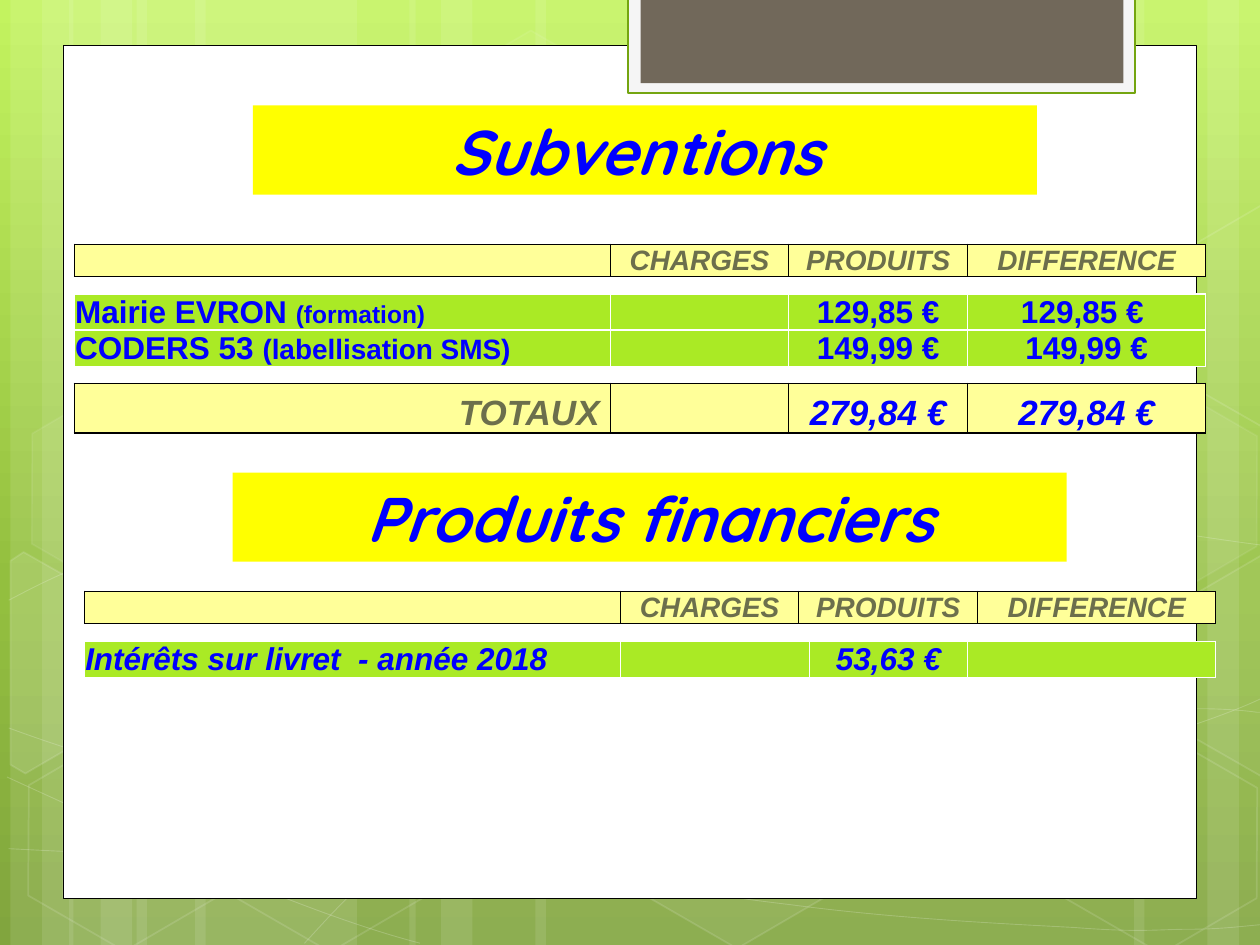
from copy import deepcopy

from lxml.etree import SubElement
from pptx import Presentation
from pptx.dml.color import RGBColor
from pptx.enum.shapes import MSO_SHAPE
from pptx.enum.text import MSO_ANCHOR, MSO_AUTO_SIZE, PP_ALIGN
from pptx.oxml.ns import qn
from pptx.util import Pt

COLORS = {
    "white": "FFFFFF", "black": "000000", "blue": "0000FF", "olive": "6C6F4C",
    "yellow": "FFFF00", "cream": "FFFF99", "lime": "AAEA25",
    "tab": "F5F5F5", "tab_line": "74A510", "tab_core": "71685A",
    "sky": "C3F35F", "meadow": "93BF3F", "ground": "81A53E",
}
BACKGROUND = [(0, "sky"), (0.62, "meadow"), (1, "ground")]
LEFT, CENTER, RIGHT = PP_ALIGN.LEFT, PP_ALIGN.CENTER, PP_ALIGN.RIGHT

STRIPE_CLUSTERS = [(78, 126, False), (111.5, 126, False), (528, 126, True), (306, 222, False)]
WAVES = [
    [(5, 485), (44, 487), (83, 489), (137, 488), (191, 487), (258, 486), (330, 479),
     (402, 472), (504, 458), (570, 444), (636, 431), (703, 409), (725, 397)],
    [(5, 343), (26, 332), (47, 321), (87, 310), (128, 300), (187, 284), (250, 279),
     (314, 274), (392, 273), (471, 279), (550, 284), (682, 307), (725, 312)],
    [(4, 444), (91, 484), (178, 523), (240, 539)],
    [(5, 416), (27, 424), (50, 432), (92, 443), (134, 454), (197, 472), (257, 485),
     (317, 497), (392, 510), (452, 517), (512, 525), (576, 528), (614, 530),
     (652, 533), (662, 531), (680, 531), (699, 531), (712, 529), (725, 528)],
    [(174, 539), (187, 525), (200, 510), (217, 497), (235, 485), (259, 470), (279, 460),
     (300, 450), (312, 446), (338, 438), (364, 431), (413, 421), (438, 416),
     (464, 411), (467, 411), (490, 410), (512, 407), (547, 405), (572, 405),
     (597, 404), (638, 405), (638, 405), (638, 405), (686, 405), (686, 405),
     (699, 405), (711, 406), (718, 407), (724, 407), (722, 407), (724, 407)],
]
HEXAGONS = [
    (240.5, 26, 4, 8), (358, 424, 6, 12), (8, 425.5, 0, 12), (10, 224.5, 7, 8),
    (125.5, 426, 0, 12), (542, 326, 10, 12), (600.5, 427, 0, 12), (600.5, 226, 7, 8),
]
CUT_HEXAGONS = [
    ([(6, 320.5), (13.5, 315.5), (69, 347), (68.5, 410.5), (14.5, 442), (6, 437)], 10),
    ([(666.5, 349), (720.5, 317.5), (726.5, 321), (726.5, 441.5), (721.5, 444), (666.5, 412.5)], 4),
    ([(666.5, 149), (720.5, 117.5), (727, 121), (726.5, 241), (721.5, 244), (666.5, 212.5)], 0),
]
PANELS = [
    ((36, 26, 648, 487.25), "white", "black", 0.5),
    ((359, -1.5, 289.5, 54.75), "tab", "tab_line", 1.25),
    ((366, -1.5, 276, 49), "tab_core", None, 0),
]
HEADINGS = [("Subventions ", (144.5, 60.25, 448, 51)), ("Produits financiers", (133, 270, 476.5, 51))]

COLUMNS = [306.25, 102, 102.25, 136]
HEADER = {
    "rows": [["", "CHARGES", "PRODUITS", "DIFFERENCE"]], "columns": COLUMNS, "height": 18.25,
    "fill": "cream", "border": ("black", 0.5), "anchor": MSO_ANCHOR.MIDDLE, "size": 16,
    "italic": True, "colors": ["olive"] * 4, "first": LEFT,
}
GRANTS = {
    "rows": [
        [[("Mairie EVRON ", 18), ("(formation)", 14)], "", "129,85 €", "129,85 € "],
        [[("CODERS 53 ", 18), ("(labellisation SMS)", 16)], "", "149,99 €", "149,99 €"],
    ],
    "columns": COLUMNS, "height": 20.5, "fill": "lime", "border": ("white", 1),
    "anchor": MSO_ANCHOR.BOTTOM, "size": 18, "italic": False, "colors": ["blue"] * 4, "first": LEFT,
}
INTEREST = GRANTS | {
    "rows": [["Intérêts sur livret  - année 2018", "", "53,63 €", ""]],
    "columns": [306.25, 108, 90.5, 141.75], "italic": True,
}
TOTALS = HEADER | {
    "rows": [["TOTAUX ", "", "279,84 €", "279,84 €"]], "height": 28.5, "border": ("black", 1),
    "anchor": MSO_ANCHOR.BOTTOM, "size": 20, "colors": ["olive"] + ["blue"] * 3, "first": RIGHT,
}
TABLES = [(42.5, 139.5, HEADER), (42.5, 168, GRANTS), (48.25, 337.75, HEADER),
          (48.25, 366.5, INTEREST), (42.5, 219, TOTALS)]


def rgb(name):
    return RGBColor.from_string(COLORS[name])


def write(frame, text, size=18, color="blue", font="Arial", italic=False, align=CENTER):
    paragraph = frame.paragraphs[0]
    paragraph.alignment = align
    if not text:
        paragraph._p.get_or_add_endParaRPr().set("sz", "1000")
        return
    run = paragraph.add_run()
    run.text = text
    run.font.size, run.font.name = Pt(size), font
    run.font.bold, run.font.italic = True, italic
    run.font.color.rgb = rgb(color)


def paint(shape, fill, fill_alpha=100, line=None, width=0, line_alpha=100):
    shape.shadow.inherit = False
    for part, color, alpha in ((shape.fill, fill, fill_alpha), (shape.line.fill, line, line_alpha)):
        if not color or not alpha:
            part.background()
            continue
        part.solid()
        part.fore_color.rgb = rgb(color)
        if alpha < 100:
            tint = part._xPr.find(qn("a:solidFill"))[0]
            SubElement(tint, qn("a:alpha")).set("val", str(alpha * 1000))
    if line:
        shape.line.width = Pt(width)


def add_preset(shapes, preset, box):
    return shapes.add_shape(preset, *map(Pt, box))


def add_outline(shapes, points, close):
    corners = [(Pt(x), Pt(y)) for x, y in points]
    builder = shapes.build_freeform(*corners[0])
    builder.add_line_segments(corners[1:], close=close)
    return builder.convert_to_shape()


def add_wave(shapes, knots):
    wave = add_outline(shapes, knots, False)
    segments = list(wave._element.iter(qn("a:lnTo")))
    outline = segments[0].getparent()
    for start in range(0, len(segments), 3):
        curve = SubElement(outline, qn("a:cubicBezTo"))
        for segment in segments[start:start + 3]:
            curve.append(segment[0])
            outline.remove(segment)
    return wave


def add_background(slide):
    fill = slide.background.fill
    fill.gradient()
    fill.gradient_angle = 270
    stops = fill.gradient_stops[0]._gs.getparent()
    stops.append(deepcopy(stops[0]))
    for stop, (position, color) in zip(fill.gradient_stops, BACKGROUND):
        stop.position = position
        stop.color.rgb = rgb(color)


def add_decoration(shapes):
    for left, width, mirrored in STRIPE_CLUSTERS:
        for offset, stripe in ((0, width), (-72, 36), (-54, 60)):
            x = left + width - offset - stripe if mirrored else left + offset
            paint(add_preset(shapes, MSO_SHAPE.RECTANGLE, (x, 0, stripe, 540)), "white", 10)
    for knots in WAVES:
        paint(add_wave(shapes, knots), None, line="white", width=0.5, line_alpha=20)
    for left, top, fill_alpha, line_alpha in HEXAGONS:
        hexagon = add_preset(shapes, MSO_SHAPE.HEXAGON, (left, top, 126, 109.5))
        hexagon.rotation = 30
        hexagon.adjustments[0] = 0.285
        paint(hexagon, "white", fill_alpha, "white", 1, line_alpha)
    for corners, fill_alpha in CUT_HEXAGONS:
        paint(add_outline(shapes, corners, True), "white", fill_alpha, "white", 1, 12)
    for box, fill, line, width in PANELS:
        paint(add_preset(shapes, MSO_SHAPE.RECTANGLE, box), fill, line=line, width=width)


def add_heading(heading, text, box):
    heading.left, heading.top, heading.width, heading.height = map(Pt, box)
    heading.fill.solid()
    heading.fill.fore_color.rgb = rgb("yellow")
    frame = heading.text_frame
    frame.word_wrap, frame.auto_size = True, MSO_AUTO_SIZE.NONE
    frame.vertical_anchor = MSO_ANCHOR.MIDDLE
    write(frame, text, size=36, font="Quicksand", italic=True)


def format_cell(cell, style):
    cell.margin_left = cell.margin_right = cell.margin_top = Pt(0.5)
    cell.margin_bottom = 0
    cell.vertical_anchor = style["anchor"]
    color, width = style["border"]
    for side in ("lnL", "lnR", "lnT", "lnB"):
        border = SubElement(cell._tc.get_or_add_tcPr(), qn(f"a:{side}"), w=str(Pt(width)))
        SubElement(SubElement(border, qn("a:solidFill")), qn("a:srgbClr"), val=COLORS[color])
    cell.fill.solid()
    cell.fill.fore_color.rgb = rgb(style["fill"])


def add_grid(shapes, left, top, style):
    rows, columns, height = style["rows"], style["columns"], style["height"]
    box = (left, top, sum(columns), height * len(rows))
    table = shapes.add_table(len(rows), len(columns), *map(Pt, box)).table
    table.first_row = table.horz_banding = False
    for column, width in zip(table.columns, columns):
        column.width = Pt(width)
    for row, contents in zip(table.rows, rows):
        row.height = Pt(height)
        for index, (cell, content) in enumerate(zip(row.cells, contents)):
            format_cell(cell, style)
            for text, size in [(content, style["size"])] if isinstance(content, str) else content:
                write(cell.text_frame, text, size=size, color=style["colors"][index],
                      italic=style["italic"], align=CENTER if index else style["first"])


def main():
    """Build the slide of grants and financial income."""
    deck = Presentation()
    deck.slide_width, deck.slide_height = Pt(720), Pt(540)
    slide = deck.slides.add_slide(deck.slide_layouts[5])
    shapes = slide.shapes
    add_background(slide)
    add_decoration(shapes)
    title = shapes.title
    shapes._spTree.append(title._element)
    (grants_text, grants_box), (income_text, income_box) = HEADINGS
    add_heading(title, grants_text, grants_box)
    add_heading(shapes.add_textbox(*map(Pt, income_box)), income_text, income_box)
    for left, top, style in TABLES:
        add_grid(shapes, left, top, style)
    deck.save("out.pptx")


if __name__ == "__main__":
    main()
